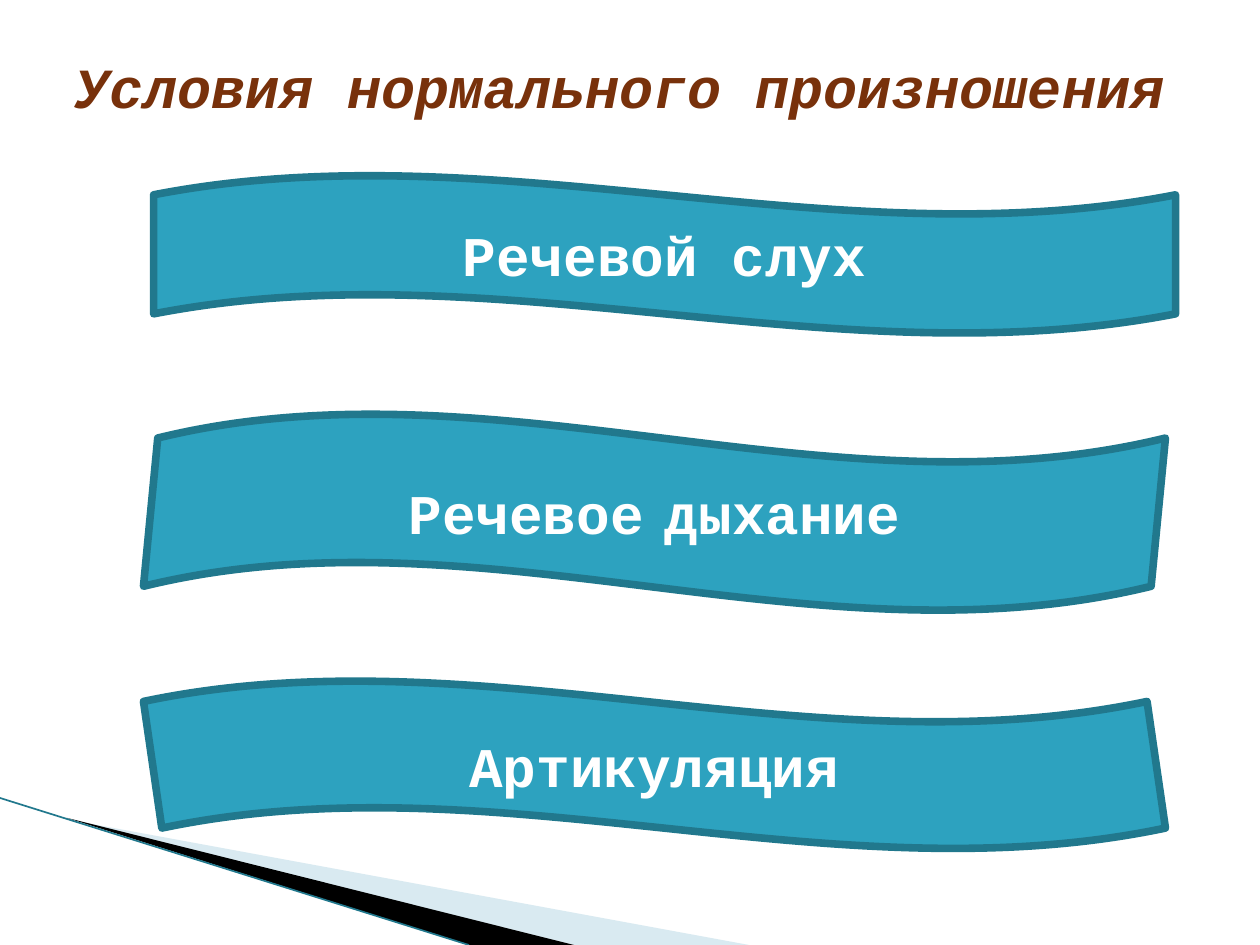
import lxml.etree
import pptx
import pptx.dml.color
import pptx.enum.shapes
import pptx.enum.text
import pptx.oxml.ns
import pptx.util

Pt = pptx.util.Pt
RGB = pptx.dml.color.RGBColor
ALIGN = pptx.enum.text.PP_ALIGN
ANCHOR = pptx.enum.text.MSO_ANCHOR
qn = pptx.oxml.ns.qn

BROWN = RGB(0x78, 0x31, 0x0B)
TEAL = RGB(0x2D, 0xA2, 0xBF)
DARK = RGB(0x21, 0x78, 0x8D)
PALE = RGB(0xA0, 0xCB, 0xDC)
BLACK = RGB(0, 0, 0)
WHITE = RGB(0xFF, 0xFF, 0xFF)


class Page:
    face = "Courier New"
    size = 32

    def __init__(self, slide):
        self.slide = slide
        self.shapes = slide.shapes

    def style(self, run, size, color, slant=False):
        font = run.font
        font.name, font.size = self.face, Pt(size)
        font.bold, font.italic = True, slant
        font.color.rgb = color

    def title(self, text, left, top, width, height):
        box = self.shapes.title
        box.left, box.top = Pt(left), Pt(top)
        box.width, box.height = Pt(width), Pt(height)
        frame = box.text_frame
        frame.text = text
        frame.auto_size = pptx.enum.text.MSO_AUTO_SIZE.NONE
        frame.vertical_anchor = ANCHOR.TOP
        frame.margin_top = Pt(8)
        line = frame.paragraphs[0]
        line.alignment = ALIGN.LEFT
        self.style(line.runs[0], 32.4, BROWN, slant=True)

    def wedge(self, points, color, alpha=None):
        """Draw a filled outline; alpha is its opacity in percent."""
        first, *rest = [(Pt(x), Pt(y)) for x, y in points]
        pen = self.shapes.build_freeform(*first)
        pen.add_line_segments(rest)
        shape = pen.convert_to_shape()
        shape.shadow.inherit = False
        shape.fill.solid()
        shape.fill.fore_color.rgb = color
        shape.line.fill.background()
        if alpha:
            tone = shape._element.spPr.find(".//" + qn("a:srgbClr"))
            node = lxml.etree.SubElement(tone, qn("a:alpha"))
            node.set("val", str(alpha * 1000))

    def line(self, start, end, color, width):
        kind = pptx.enum.shapes.MSO_CONNECTOR.STRAIGHT
        rule = self.shapes.add_connector(kind, *map(Pt, start + end))
        rule.line.color.rgb = color
        rule.line.width = Pt(width)
        lxml.etree.SubElement(rule._element.spPr, qn("a:effectLst"))

    def wave(self, parts, left, top, height, skew):
        """Draw a banner; parts are (text, size) pairs."""
        kind = pptx.enum.shapes.MSO_SHAPE.WAVE
        shape = self.shapes.add_shape(
            kind, Pt(left), Pt(top), Pt(584), Pt(height))
        shape.adjustments[0] = 0.125
        shape.adjustments[1] = skew
        shape.shadow.inherit = False
        shape.fill.solid()
        shape.fill.fore_color.rgb = TEAL
        shape.line.color.rgb = DARK
        shape.line.width = Pt(4.33)
        frame = shape.text_frame
        frame.vertical_anchor = ANCHOR.MIDDLE
        line = frame.paragraphs[0]
        line.alignment = ALIGN.CENTER
        for text, size in parts:
            run = line.add_run()
            run.text = text
            self.style(run, size, WHITE)


def main():
    deck = pptx.Presentation()
    deck.slide_width, deck.slide_height = Pt(720), Pt(540)
    page = Page(deck.slides.add_slide(deck.slide_layouts[5]))
    big = page.size

    page.wedge([(39.6, 468.5), (428, 540), (328, 540)], PALE, alpha=40)
    page.wedge([(38, 467.3), (328, 540), (268, 540)], BLACK)
    page.line((0, 456), (268, 540), DARK, 0.95)

    page.title("Условия нормального произношения", 36, 21.6, 648, 90)

    breath = [("Речевое", big), (" ", 20), ("дыхание", big)]
    page.wave([("Речевой слух", big)], 87.8, 100, 90.7, 0)
    page.wave(breath, 82, 236.2, 113, -0.007)
    page.wave([("Артикуляция", big)], 82, 388.8, 96.5, 0.009)

    deck.save("out.pptx")


if __name__ == "__main__":
    main()
